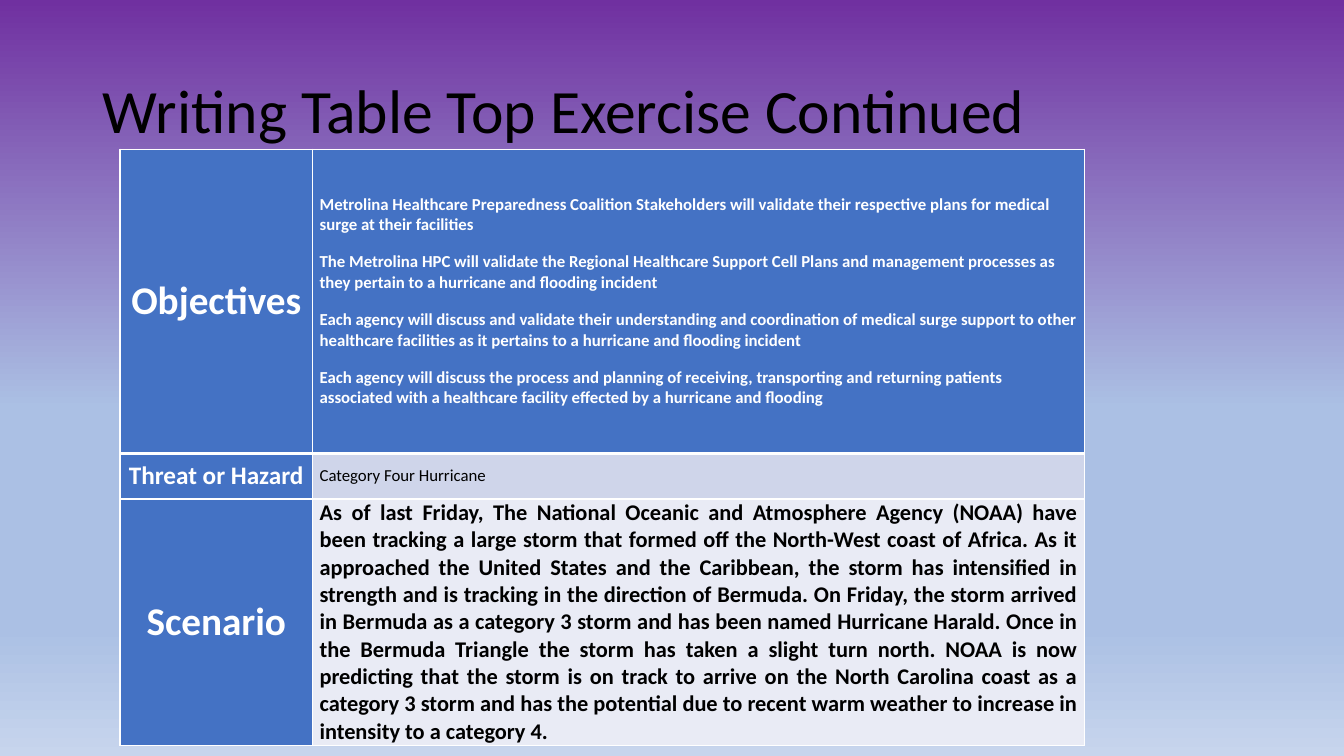
from lxml import etree
from pptx import Presentation
from pptx.dml.color import RGBColor
from pptx.enum.text import MSO_ANCHOR, PP_ALIGN
from pptx.oxml.ns import qn
from pptx.util import Pt

LEFT, CENTER, JUSTIFY = PP_ALIGN.LEFT, PP_ALIGN.CENTER, PP_ALIGN.JUSTIFY
MIDDLE = MSO_ANCHOR.MIDDLE
TITLE_ONLY = 5
EMU_PER_PX = 9144  # 100 px to the inch
COLORS = {
    "white": "FFFFFF", "black": "000000", "purple": "7030A0",
    "sky": "ABC0E4", "pale sky": "C7D5ED",
    "blue": "4472C4", "band": "CFD5EA", "light band": "E9EBF5",
}
BACKDROP = [(0, "purple", 96), (54, "sky", 100), (83, "sky", 100), (100, "pale sky", 100)]

OBJECTIVES = [
    "Metrolina Healthcare Preparedness Coalition Stakeholders will validate their "
    "respective plans for medical surge at their facilities",
    "The Metrolina HPC will validate the Regional Healthcare Support Cell Plans and "
    "management processes as they pertain to a hurricane and flooding incident",
    "Each agency will discuss and validate their understanding and coordination of medical "
    "surge support to other healthcare facilities as it pertains to a hurricane and "
    "flooding incident",
    "Each agency will discuss the process and planning of receiving, transporting and "
    "returning patients associated with a healthcare facility effected by a hurricane "
    "and flooding",
]
SCENARIO = (
    "As of last Friday, The National Oceanic and Atmosphere Agency (NOAA) have been tracking "
    "a large storm that formed off the North-West coast of Africa. As it approached the United "
    "States and the Caribbean, the storm has intensified in strength and is tracking in the "
    "direction of Bermuda. On Friday, the storm arrived in Bermuda as a category 3 storm and "
    "has been named Hurricane Harald. Once in the Bermuda Triangle the storm has taken a slight "
    "turn north. NOAA is now predicting that the storm is on track to arrive on the North "
    "Carolina coast as a category 3 storm and has the potential due to recent warm weather to "
    "increase in intensity to a category 4."
)


def px(length):
    return length * EMU_PER_PX


def rgb(color):
    return RGBColor.from_string(COLORS[color])


class ExerciseSlide:
    font = "Calibri"

    def __init__(self, deck):
        self.slide = deck.slides.add_slide(deck.slide_layouts[TITLE_ONLY])

    def backdrop(self, stops):
        fill = self.slide.background.fill
        fill.gradient()
        fill.gradient_angle = 270
        stop_list = self.slide.element.xpath(".//a:gsLst")[0]
        for old_stop in list(stop_list):
            stop_list.remove(old_stop)
        for percent, color, opacity in stops:
            stop = etree.SubElement(stop_list, qn("a:gs"), pos=str(percent * 1000))
            shade = etree.SubElement(stop, qn("a:srgbClr"), val=COLORS[color])
            if opacity < 100:
                etree.SubElement(shade, qn("a:alpha"), val=str(opacity * 1000))

    def style(self, paragraph, size, color, bold=False, align=LEFT):
        paragraph.alignment = align
        font = paragraph.font
        font.name, font.size, font.bold = self.font, Pt(size), bold
        font.color.rgb = rgb(color)

    def title(self, text, left, top, width, height):
        title = self.slide.shapes.title
        title.left, title.top, title.width, title.height = map(px, (left, top, width, height))
        title.text_frame.text = text
        title.text_frame.vertical_anchor = MIDDLE
        heading = title.text_frame.paragraphs[0]
        heading.line_spacing = 0.9
        self.style(heading, 44, "black")

    def table(self, left, top, widths, heights):
        table = self.slide.shapes.add_table(
            len(heights), len(widths), px(left), px(top), px(sum(widths)), px(sum(heights))
        ).table
        for column, width in zip(table.columns, widths):
            column.width = px(width)
        for row, height in zip(table.rows, heights):
            row.height = px(height)
        return table

    def cell(self, cell, texts, fill, size, color="white", bold=True, align=LEFT,
             gap=6, top_line=1, bottom_line=1):
        cell.margin_left = cell.margin_right = px(7)
        cell.margin_top = cell.margin_bottom = 0
        cell.vertical_anchor = MIDDLE
        cell.fill.solid()
        cell.fill.fore_color.rgb = rgb(fill)
        cell.text_frame.text = "\n".join(texts)
        for paragraph in cell.text_frame.paragraphs:
            paragraph.space_before = paragraph.space_after = Pt(gap)
            self.style(paragraph, size, color, bold, align)
        self.borders(cell, {"L": 1, "R": 1, "T": top_line, "B": bottom_line})

    def borders(self, cell, widths):
        properties = cell._tc.get_or_add_tcPr()
        for index, (side, width) in enumerate(widths.items()):
            line = etree.Element(qn("a:ln" + side), w=str(Pt(width)))
            solid = etree.SubElement(line, qn("a:solidFill"))
            etree.SubElement(solid, qn("a:srgbClr"), val=COLORS["white"])
            properties.insert(index, line)


def main():
    deck = Presentation()
    deck.slide_width, deck.slide_height = px(1333), px(750)
    page = ExerciseSlide(deck)
    page.backdrop(BACKDROP)
    page.title("Writing Table Top Exercise Continued", 92, 40, 1150, 145)

    exercise = page.table(119, 148, [191, 766], [302, 45, 244])
    rows = [
        ("Objectives", 28, OBJECTIVES, dict(fill="blue", size=12),
         dict(bottom_line=3)),
        ("Threat or Hazard", 18, ["Category Four Hurricane"],
         dict(fill="band", size=12, color="black", bold=False), dict(top_line=3)),
        ("Scenario", 28, [SCENARIO],
         dict(fill="light band", size=16, color="black", align=JUSTIFY, gap=0), {}),
    ]
    for index, (label, label_size, details, look, lines) in enumerate(rows):
        page.cell(exercise.cell(index, 0), [label], "blue", label_size, align=CENTER, **lines)
        page.cell(exercise.cell(index, 1), details, **look, **lines)
    deck.save("out.pptx")


if __name__ == "__main__":
    main()
